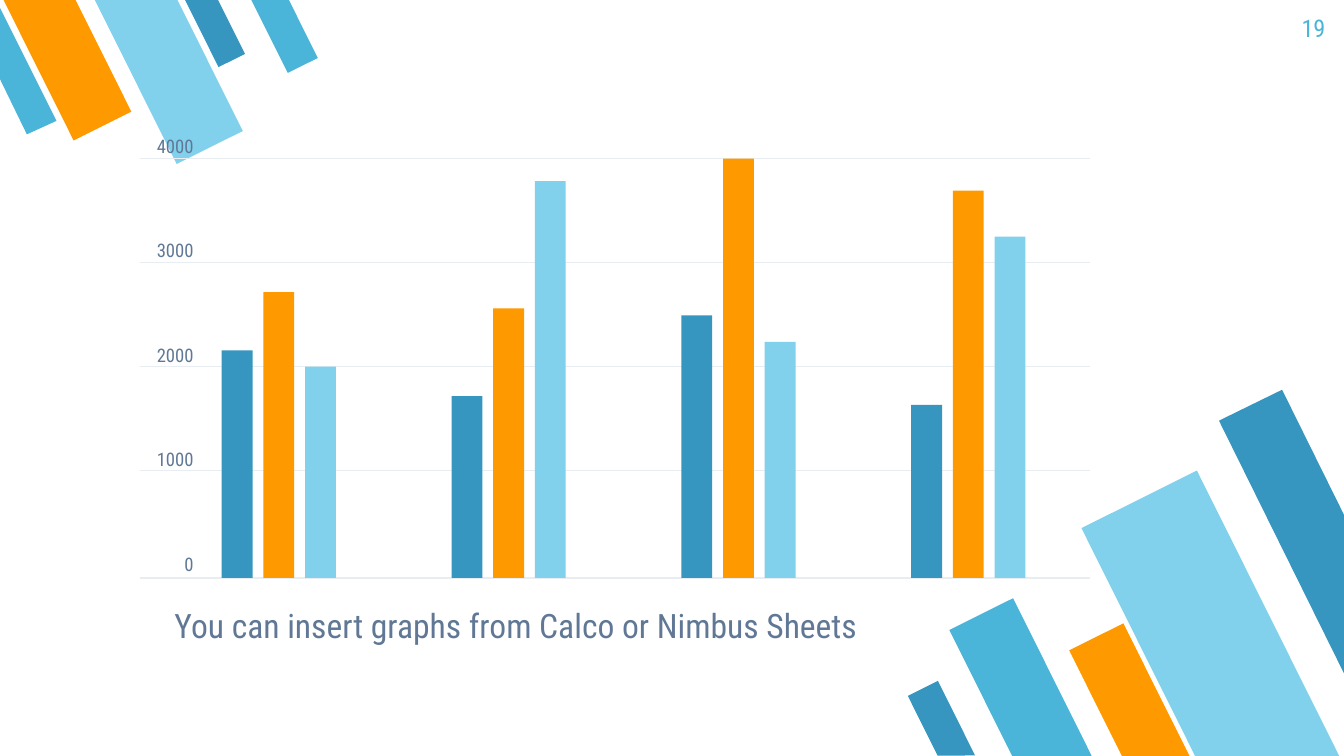
from typing import NamedTuple

from lxml import etree
from pptx import Presentation
from pptx.dml.color import RGBColor
from pptx.enum.shapes import MSO_CONNECTOR, MSO_SHAPE
from pptx.enum.text import PP_ALIGN
from pptx.oxml.ns import qn
from pptx.util import Inches, Pt

RECT = MSO_SHAPE.RECTANGLE
STRIPE = MSO_SHAPE.FLOWCHART_MANUAL_INPUT
STRAIGHT = MSO_CONNECTOR.STRAIGHT
LEFT, RIGHT = PP_ALIGN.LEFT, PP_ALIGN.RIGHT

WIDTH = 10
HEIGHT = WIDTH * 9 / 16
FONT = "Roboto Condensed"
BLUE, ORANGE, SKY, CYAN = "3796BF", "FF9900", "81D1EC", "4BB5D9"
GREY, PALE = "607896", "E8EDF1"

# Chart grid
AXIS_LEFT, AXIS_RIGHT = 0.104 * WIDTH, 0.811 * WIDTH
TOP, BASE = 1.18, 4.3
GRID_STEP = (3.5 - TOP) / 3
AXIS_MAX = 4000
FIRST_BAR, BAR_WIDTH = 1.65, 0.23
BAR_PITCH, GROUP_PITCH = 0.31, 1.71


class Stripe(NamedTuple):
    left: float
    top: float
    width: float
    height: float
    color: str


class Series(NamedTuple):
    color: str
    values: tuple[int, ...]


class Label(NamedTuple):
    left: float
    top: float
    width: float
    height: float
    lines: tuple[str, ...]
    size: float
    color: str
    align: PP_ALIGN = LEFT
    inset: float = 0.1
    first_gap: float = 0
    gap: float = 0
    last_gap: float = 0


LOWER_STRIPES = (
    Stripe(7.33, 4.5, 0.53, 1.32, CYAN),
    Stripe(8.53, 3.59, 0.96, 2.39, SKY),
    Stripe(8.18, 4.68, 0.45, 1.11, ORANGE),
    Stripe(6.88, 5.09, 0.25, 0.62, BLUE),
)
UPPER_STRIPES = (
    Stripe(1.49, -0.08, 0.22, 0.56, BLUE),
    Stripe(0.26, -0.18, 0.48, 1.18, ORANGE),
    Stripe(0.98, -0.2, 0.55, 1.37, SKY),
    Stripe(1.99, -0.1, 0.25, 0.62, CYAN),
)
RIGHT_EDGE = ((9.54, 2.9), (9.07, 3.13), (WIDTH, 5.01), (WIDTH, 3.83))
LEFT_EDGE = ((0.2, 1), (0.42, 0.9), (0, 0.06), (0, 0.59))

SERIES = (
    Series(BLUE, (2170, 1735, 2505, 1650)),
    Series(ORANGE, (2725, 2570, 4000, 3695)),
    Series(SKY, (2015, 3785, 2250, 3255)),
)

CAPTION = Label(1.2, 4.4, 7.6, 0.57,
                ("You can insert graphs from Calco or Nimbus Sheets",),
                18, GREY, first_gap=3.6)
NUMBER = Label(9.36, 0, 0.6, 0.43, ("19",), 13, CYAN, RIGHT)
AXIS = Label(AXIS_LEFT, 1, 0.4, 3.31, ("4000", "3000", "2000", "1000", "0"),
             10, GREY, RIGHT, inset=0, gap=44, last_gap=44)


def rgb(color: str) -> RGBColor:
    return RGBColor.from_string(color)


def paint(sp, color: str) -> None:
    sp.shadow.inherit = False
    sp.fill.solid()
    sp.fill.fore_color.rgb = rgb(color)
    sp.line.fill.background()


def add_block(s, kind, left: float, top: float, width: float, height: float, color: str):
    sp = s.shapes.add_shape(kind, Inches(left), Inches(top), Inches(width), Inches(height))
    paint(sp, color)
    return sp


def add_stripes(s, stripes: tuple[Stripe, ...], rotation: float) -> None:
    for stripe in stripes:
        sp = add_block(s, STRIPE, *stripe)
        sp.rotation = rotation
        sp._element.spPr.find(qn("a:xfrm")).set("flipH", "1")


def add_cut_stripe(s, points: tuple, color: str) -> None:
    """Draw a stripe that the slide's edge cuts off."""
    corners = [(Inches(x), Inches(y)) for x, y in points]
    builder = s.shapes.build_freeform(*corners[0])
    builder.add_line_segments(corners[1:], close=True)
    paint(builder.convert_to_shape(), color)


def add_label(s, label: Label) -> None:
    box = s.shapes.add_textbox(Inches(label.left), Inches(label.top),
                               Inches(label.width), Inches(label.height))
    tf = box.text_frame
    tf.word_wrap = True
    tf.margin_left = tf.margin_right = Inches(label.inset)
    tf.margin_top = tf.margin_bottom = Inches(label.inset)
    tf.text = "\n".join(label.lines)
    for i, p in enumerate(tf.paragraphs):
        p.alignment = label.align
        p.space_before = Pt(label.gap if i else label.first_gap)
        font = p.runs[0].font
        font.name, font.size = FONT, Pt(label.size)
        font.color.rgb = rgb(label.color)
    p.space_after = Pt(label.last_gap)


def add_gridline(s, y: float) -> None:
    line = s.shapes.add_connector(STRAIGHT, Inches(AXIS_LEFT), Inches(y),
                                  Inches(AXIS_RIGHT), Inches(y))
    line.line.color.rgb = rgb(PALE)
    line.line.width = Pt(0.75)
    etree.SubElement(line._element.spPr, qn("a:effectLst"))


def add_bars(s) -> None:
    for group in range(len(SERIES[0].values)):
        for column, series in enumerate(SERIES):
            left = FIRST_BAR + group * GROUP_PITCH + column * BAR_PITCH
            height = (BASE - TOP) * series.values[group] / AXIS_MAX
            add_block(s, RECT, left, BASE - height, BAR_WIDTH, height, series.color)


def main() -> None:
    prs = Presentation()
    prs.slide_width, prs.slide_height = Inches(WIDTH), Inches(HEIGHT)
    s = prs.slides.add_slide(prs.slide_layouts[6])

    add_stripes(s, LOWER_STRIPES, 153.5)
    add_cut_stripe(s, RIGHT_EDGE, BLUE)
    add_stripes(s, UPPER_STRIPES, 333.5)
    add_cut_stripe(s, LEFT_EDGE, CYAN)

    add_label(s, CAPTION)
    add_label(s, NUMBER)
    for row in range(4):
        add_gridline(s, TOP + row * GRID_STEP)
    add_gridline(s, BASE)
    add_label(s, AXIS)
    add_bars(s)
    prs.save("out.pptx")


if __name__ == "__main__":
    main()
